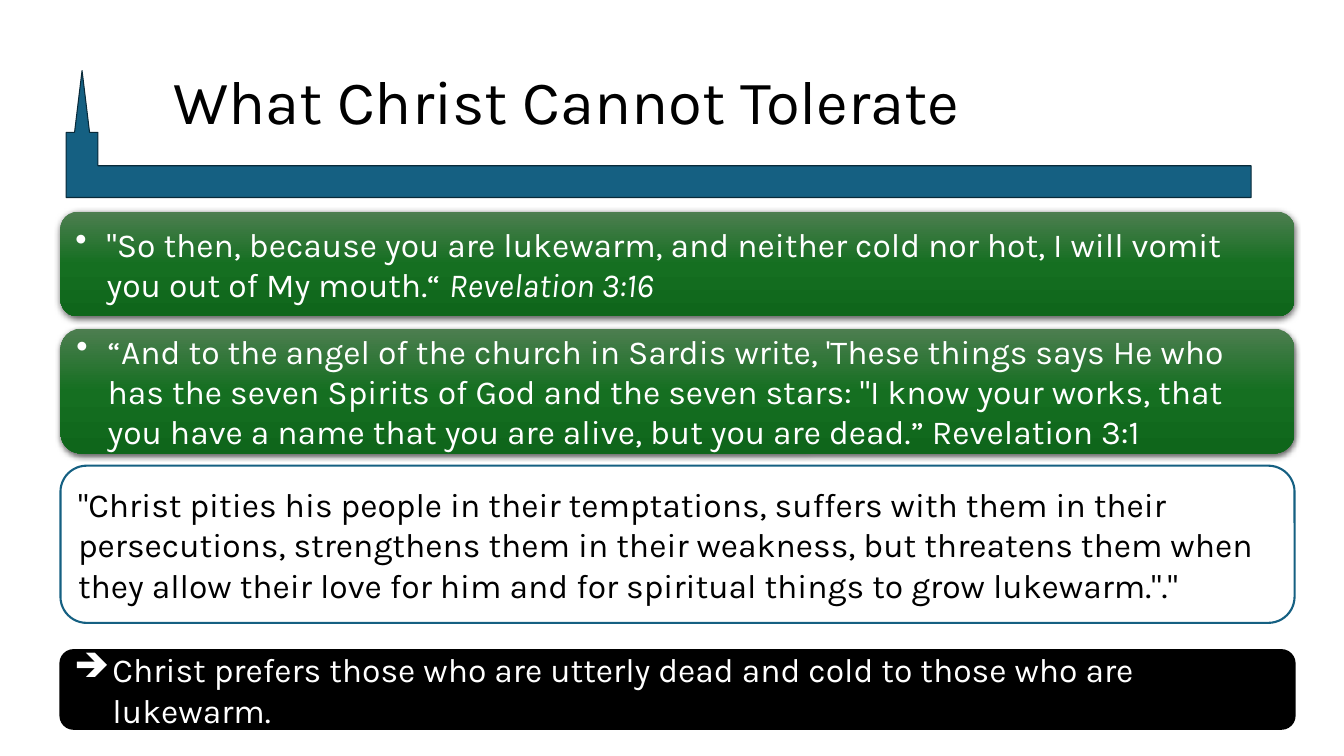
from dataclasses import dataclass
from typing import Optional

from lxml import etree
from pptx import Presentation
from pptx import util as u
from pptx.dml.color import RGBColor
from pptx.enum import shapes, text
from pptx.oxml.ns import qn

CELL = u.Inches(0.1)
FONT = "Karla"
WHITE = RGBColor(0xFF, 0xFF, 0xFF)
BLACK = RGBColor(0x00, 0x00, 0x00)
BLUE = RGBColor(0x15, 0x60, 0x82)
NAVY = RGBColor(0x09, 0x2A, 0x39)
GREENS = (
    (0, RGBColor(0x4D, 0x7E, 0x50)),
    (50, RGBColor(0x15, 0x6F, 0x21)),
    (100, RGBColor(0x0F, 0x66, 0x1B)),
)


@dataclass(frozen=True)
class Panel:
    row: float
    rows: float
    words: str
    reference: str = ""
    bullet: str = ""
    indent: float = 0
    fill: Optional[RGBColor] = None
    line: Optional[RGBColor] = None
    ink: RGBColor = WHITE


PANEL_COLUMN, PANEL_COLUMNS = 6, 122.4
PANELS = (
    Panel(21, 10.4,
          '"So then, because you are lukewarm, and neither cold nor hot, '
          'I will vomit you out of My mouth.“ ',
          reference="Revelation 3:16", bullet="•", indent=3.1),
    Panel(32.6, 12.4,
          "“And to the angel of the church in Sardis write, 'These things says "
          "He who has the seven Spirits of God and the seven stars: \"I know "
          "your works, that you have a name that you are alive, but you are "
          "dead.” Revelation 3:1",
          bullet="•", indent=3.1),
    Panel(46.2, 15.6,
          '"Christ pities his people in their temptations, suffers with them '
          'in their persecutions, strengthens them in their weakness, but '
          'threatens them when they allow their love for him and for spiritual '
          'things to grow lukewarm."."',
          fill=WHITE, line=BLUE, ink=BLACK),
    Panel(64.5, 7.8,
          "Christ prefers those who are utterly dead and cold to those who are "
          "lukewarm.",
          bullet="➔", indent=3.8, fill=BLACK, line=BLACK),
)


def cells(*counts: float) -> list[u.Emu]:
    return [u.Emu(round(count * CELL)) for count in counts]


def write(para, words: str, *, size: float = 24, ink: RGBColor = BLACK,
          italic: bool = False) -> None:
    span = para.add_run()
    span.text = words
    span.font.name = FONT
    span.font.size = u.Pt(size)
    span.font.color.rgb = ink
    if italic:
        span.font.italic = True


def add_bullet(para, mark: str, indent: float) -> None:
    properties = para._p.get_or_add_pPr()
    hang = cells(indent)[0]
    properties.set("marL", str(hang))
    properties.set("indent", str(-hang))
    etree.SubElement(properties, qn("a:buChar"), char=mark)


def paint_gradient(shape) -> None:
    shape.fill.gradient()
    shape.fill.gradient_angle = 270
    stops = shape._element.spPr.find(".//" + qn("a:gsLst"))
    stops.clear()
    for percent, color in GREENS:
        stop = etree.SubElement(stops, qn("a:gs"), pos=str(percent * 1000))
        etree.SubElement(stop, qn("a:srgbClr"), val=str(color))


def cast_shadow(shape) -> None:
    effects = shape._element.spPr.find(qn("a:effectLst"))
    shadow = etree.SubElement(
        effects, qn("a:outerShdw"), blurRad=str(u.Pt(4.5)), dist=str(u.Pt(1.5)),
        dir="5400000", algn="ctr", rotWithShape="0")
    color = etree.SubElement(shadow, qn("a:srgbClr"), val=str(BLACK))
    etree.SubElement(color, qn("a:alpha"), val="63000")


def set_line(shape, color: Optional[RGBColor], width: float) -> None:
    if color is None:
        shape.line.fill.background()
    else:
        shape.line.color.rgb = color
        shape.line.width = u.Pt(width)


def draw_steeple(page) -> None:
    steeple = page.shapes.add_shape(
        shapes.MSO_SHAPE.BENT_UP_ARROW, *cells(7.4, 7, 116.7, 12.6))
    for position, share in enumerate((0.25, 0.059, 0.487)):
        steeple.adjustments[position] = share
    steeple._element.spPr.find(qn("a:xfrm")).set("flipH", "1")
    steeple.shadow.inherit = False
    steeple.fill.solid()
    steeple.fill.fore_color.rgb = BLUE
    set_line(steeple, NAVY, 0.75)


def draw_title(page, words: str) -> None:
    box = page.shapes.add_textbox(*cells(16.2, 4.1, 108, 12.6))
    box.text_frame.word_wrap = True
    box.text_frame.vertical_anchor = text.MSO_ANCHOR.MIDDLE
    para = box.text_frame.paragraphs[0]
    para.line_spacing = 0.9
    write(para, words, size=44)


def draw_panel(page, panel: Panel) -> None:
    box = page.shapes.add_shape(
        shapes.MSO_SHAPE.ROUNDED_RECTANGLE,
        *cells(PANEL_COLUMN, panel.row, PANEL_COLUMNS, panel.rows))
    box.shadow.inherit = False
    if panel.fill is None:
        paint_gradient(box)
        cast_shadow(box)
    else:
        box.fill.solid()
        box.fill.fore_color.rgb = panel.fill
    set_line(box, panel.line, 1.5)
    box.text_frame.word_wrap = True
    box.text_frame.vertical_anchor = text.MSO_ANCHOR.MIDDLE
    para = box.text_frame.paragraphs[0]
    para.alignment = text.PP_ALIGN.LEFT
    if panel.bullet:
        add_bullet(para, panel.bullet, panel.indent)
    write(para, panel.words, ink=panel.ink)
    if panel.reference:
        write(para, panel.reference, ink=panel.ink, italic=True)


def main() -> None:
    deck = Presentation()
    deck.slide_width, deck.slide_height = u.Inches(13.33), u.Inches(7.5)
    page = deck.slides.add_slide(deck.slide_layouts[6])
    draw_steeple(page)
    draw_title(page, "What Christ Cannot Tolerate")
    for panel in PANELS:
        draw_panel(page, panel)
    deck.save("out.pptx")


if __name__ == "__main__":
    main()
